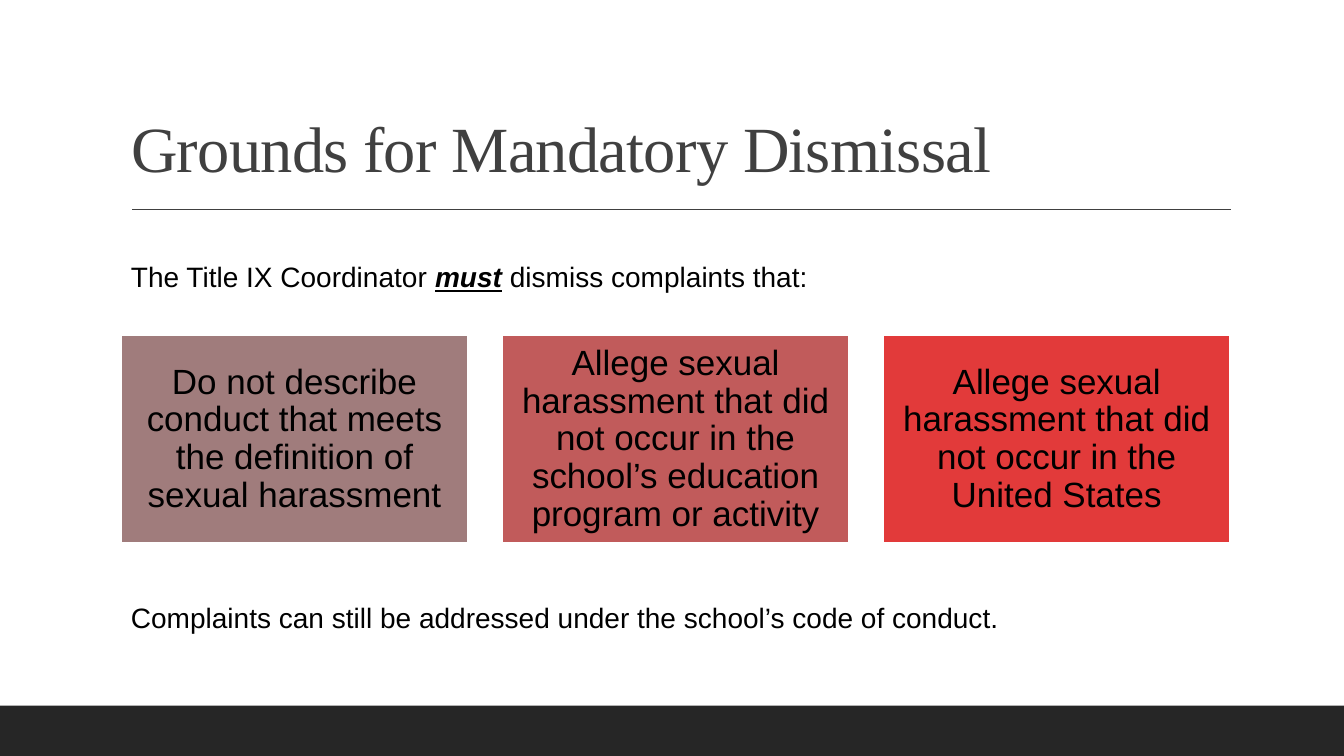
from pptx import Presentation
from pptx.dml.color import RGBColor
from pptx.enum.shapes import MSO_CONNECTOR, MSO_SHAPE
from pptx.enum.text import MSO_ANCHOR, MSO_AUTO_SIZE, PP_ALIGN
from pptx.oxml.ns import qn
from pptx.util import Inches, Pt
from lxml import etree

RECT = MSO_SHAPE.RECTANGLE
LINE = MSO_CONNECTOR.STRAIGHT
MIDDLE, BOTTOM = MSO_ANCHOR.MIDDLE, MSO_ANCHOR.BOTTOM
LEFT, CENTER = PP_ALIGN.LEFT, PP_ALIGN.CENTER
FIXED = MSO_AUTO_SIZE.NONE

BLACK = RGBColor(0x00, 0x00, 0x00)
WHITE = RGBColor(0xFF, 0xFF, 0xFF)
GREY = RGBColor(0x40, 0x40, 0x40)
DARK = RGBColor(0x26, 0x26, 0x26)
MAUVE = RGBColor(0xA0, 0x7C, 0x7C)
ROSE = RGBColor(0xC1, 0x5B, 0x5B)
RED = RGBColor(0xE2, 0x3A, 0x3A)

WIDE, HIGH = 13.33, 7.5
EDGE, SPAN = 1.2, 11
GAP = 0.34
CARDS = [
    (MAUVE, "Do not describe conduct that meets the definition of sexual harassment"),
    (ROSE, "Allege sexual harassment that did not occur in the school’s education program or activity"),
    (RED, "Allege sexual harassment that did not occur in the United States"),
]


def style(para, size, color=BLACK, face="Arial", align=LEFT):
    """Set the font and alignment of a paragraph."""
    para.alignment = align
    para.font.name = face
    para.font.size = Pt(size)
    para.font.color.rgb = color


def block(slide, box, fill):
    """Add a flat filled rectangle without an outline."""
    shape = slide.shapes.add_shape(RECT, *map(Inches, box))
    shape.shadow.inherit = False
    shape.fill.solid()
    shape.fill.fore_color.rgb = fill
    shape.line.fill.background()
    return shape


def head(slide, box, text):
    """Place the title in the box with a rule beneath it."""
    x, y, w, h = box
    title = slide.shapes.title
    title.left, title.top, title.width, title.height = map(Inches, box)
    frame = title.text_frame
    frame.text = text
    frame.auto_size = FIXED
    frame.word_wrap = True
    frame.vertical_anchor = BOTTOM
    para = frame.paragraphs[0]
    style(para, 46, GREY, "Times New Roman")
    para.line_spacing = 0.9
    para.runs[0].font._element.set("spc", "-50")
    level = Inches(y + h + 0.18)
    rule = slide.shapes.add_connector(LINE, Inches(x + 0.11), level, Inches(x + w + 0.01), level)
    rule.line.color.rgb = GREY
    rule.line.width = Pt(1)
    etree.SubElement(rule._element.spPr, qn("a:effectLst"))


def note(slide, box, parts):
    """Write one line, with every second part stressed."""
    frame = slide.shapes.add_textbox(*map(Inches, box)).text_frame
    frame.word_wrap = False
    para = frame.paragraphs[0]
    style(para, 20)
    for i, part in enumerate(parts):
        run = para.add_run()
        run.text = part
        if i % 2:
            run.font.bold = run.font.italic = run.font.underline = True


def cards(slide, box, items):
    """Share the box among equal coloured cards."""
    x, y, w, h = box
    width = (w - GAP * (len(items) - 1)) / len(items)
    for i, (fill, text) in enumerate(items):
        card = block(slide, (x + i * (width + GAP), y, width, h), fill)
        card.line.color.rgb = WHITE
        card.line.width = Pt(1.25)
        frame = card.text_frame
        frame.text = text
        frame.word_wrap = True
        frame.vertical_anchor = MIDDLE
        frame.margin_left = frame.margin_right = Inches(0.1)
        frame.margin_top = frame.margin_bottom = Inches(0.1)
        para = frame.paragraphs[0]
        style(para, 25, align=CENTER)
        para.line_spacing = 0.9


def main():
    """Build and save the slide."""
    deck = Presentation()
    deck.slide_width, deck.slide_height = Inches(WIDE), Inches(HIGH)
    slide = deck.slides.add_slide(deck.slide_layouts[5])
    block(slide, (0, HIGH - 0.5, WIDE, 0.5), DARK)
    head(slide, (EDGE, 0.31, SPAN, 1.59), "Grounds for Mandatory Dismissal")
    cards(slide, (EDGE, 3.33, SPAN, 2.06), CARDS)
    note(slide, (EDGE, 2.53, 6.98, 0.44),
         ["The Title IX Coordinator ", "must", " dismiss complaints that:"])
    note(slide, (EDGE, 5.91, 8.87, 0.44),
         ["Complaints can still be addressed under the school’s code of conduct."])
    deck.save("out.pptx")


if __name__ == "__main__":
    main()
